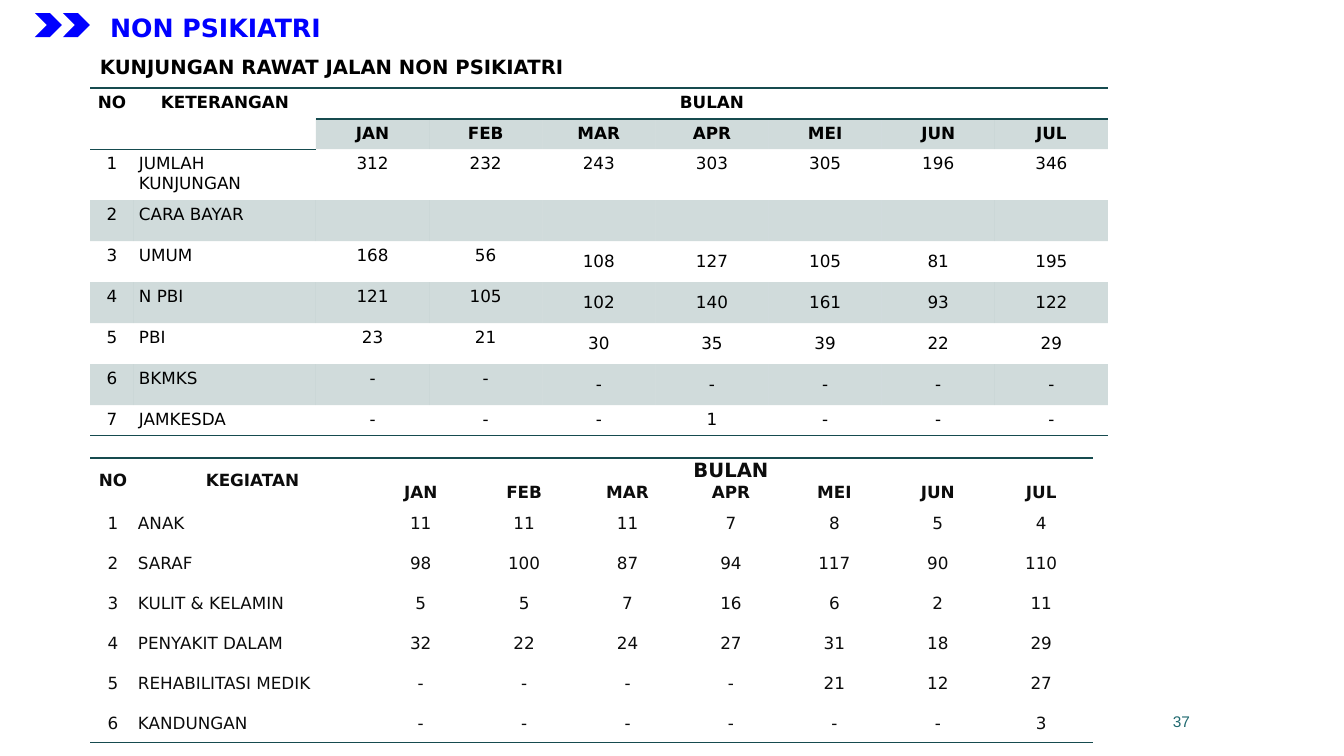
from lxml import etree
from pptx import Presentation
from pptx.dml.color import RGBColor
from pptx.enum.shapes import MSO_SHAPE
from pptx.enum.text import MSO_ANCHOR, MSO_AUTO_SIZE, PP_ALIGN
from pptx.oxml.ns import qn
from pptx.util import Emu, Pt

CHEVRON = MSO_SHAPE.CHEVRON
TOP, MIDDLE = MSO_ANCHOR.TOP, MSO_ANCHOR.MIDDLE
FIT_SHAPE, FIXED = MSO_AUTO_SIZE.SHAPE_TO_FIT_TEXT, MSO_AUTO_SIZE.NONE
LEFT, CENTER, RIGHT = PP_ALIGN.LEFT, PP_ALIGN.CENTER, PP_ALIGN.RIGHT

BLUE = RGBColor(0x00, 0x00, 0xFF)
BLACK = RGBColor(0x00, 0x00, 0x00)
NEAR_BLACK = RGBColor(0x0C, 0x0C, 0x0C)
TEAL = RGBColor(0x16, 0x4B, 0x4F)
PAGE_TEAL = RGBColor(0x1F, 0x69, 0x6F)

PLAIN_TABLE = "{2D5ABB26-0587-4C30-8999-92F81FD0307C}"
MONTHS = "JAN FEB MAR APR MEI JUN JUL".split()

VISITS = [
    ("JUMLAH KUNJUNGAN", "312 232 243 303 305 196 346"),
    ("CARA BAYAR", ""),
    ("UMUM", "168 56 108 127 105 81 195"),
    ("N PBI", "121 105 102 140 161 93 122"),
    ("PBI", "23 21 30 35 39 22 29"),
    ("BKMKS", "- - - - - - -"),
    ("JAMKESDA", "- - - 1 - - -"),
]
ACTIVITIES = [
    ("ANAK", "11 11 11 7 8 5 4"),
    ("SARAF", "98 100 87 94 117 90 110"),
    ("KULIT & KELAMIN", "5 5 7 16 6 2 11"),
    ("PENYAKIT DALAM", "32 22 24 27 31 18 29"),
    ("REHABILITASI MEDIK", "- - - - 21 12 27"),
    ("KANDUNGAN", "- - - - - - 3"),
]


def px(length):
    return Emu(round(length * 914400 / 100.8))


class Deck:
    font = "DejaVu Sans"

    def __init__(self):
        self.file = Presentation()
        self.file.slide_width, self.file.slide_height = px(1344), px(756)
        self.slide = self.file.slides.add_slide(self.file.slide_layouts[6])

    def style(self, paragraph, size, color, bold, align, font=None):
        paragraph.alignment = align
        paragraph.font.name = font or self.font
        paragraph.font.size = Pt(size)
        paragraph.font.bold = bold
        paragraph.font.color.rgb = color

    def text(self, words, box, size, color, bold=True, align=LEFT, font=None,
             anchor=TOP, wrap=False, spacing=None):
        frame = self.slide.shapes.add_textbox(*map(px, box)).text_frame
        frame.word_wrap = wrap
        frame.auto_size = FIXED if wrap else FIT_SHAPE
        frame.vertical_anchor = anchor
        paragraph = frame.paragraphs[0]
        paragraph.text = words
        paragraph.line_spacing = spacing
        self.style(paragraph, size, color, bold, align, font)

    def chevron(self, left):
        mark = self.slide.shapes.add_shape(CHEVRON, px(left), px(13), px(27), px(24))
        mark.shadow.inherit = False
        mark.fill.solid()
        mark.fill.fore_color.rgb = BLUE
        mark.line.fill.background()

    def edge(self, cell, side):
        line = etree.SubElement(cell._tc.get_or_add_tcPr(), qn("a:ln" + side), w=str(Pt(1)))
        paint = etree.SubElement(line, qn("a:solidFill"))
        etree.SubElement(paint, qn("a:srgbClr"), val=str(TEAL))

    def shade(self, cell):
        cell.fill.solid()
        cell.fill.fore_color.rgb = TEAL
        tint = cell._tc.tcPr.find(".//" + qn("a:srgbClr"))
        etree.SubElement(tint, qn("a:alpha"), val="20000")

    def monthly_table(self, top, label, records, heights, label_widths, months_width,
                      color, margins, month_size=12, banded=False):
        grid = [["NO", label, "BULAN"] + [""] * 6, ["", ""] + MONTHS]
        for number, (name, values) in enumerate(records, 1):
            grid.append([str(number), name] + (values.split() or [""] * 7))
        last = len(grid) - 1
        table = self.slide.shapes.add_table(
            len(grid), 9, px(90), px(top),
            px(sum(label_widths) + months_width), px(sum(heights))).table
        table.first_row = table.horz_banding = False
        table._tbl.tblPr.find(qn("a:tableStyleId")).text = PLAIN_TABLE
        widths = label_widths + [months_width / 7] * 7
        for column, width in zip(table.columns, widths):
            column.width = px(width)
        for row, height in zip(table.rows, heights):
            row.height = px(height)
        for r, row in enumerate(grid):
            for c, words in enumerate(row):
                cell = table.cell(r, c)
                (cell.margin_left, cell.margin_top,
                 cell.margin_right, cell.margin_bottom) = map(px, margins)
                late_month = r > 3 and c > 3
                cell.vertical_anchor = MIDDLE if late_month or not banded else TOP
                paragraph = cell.text_frame.paragraphs[0]
                if words:
                    paragraph.text = words
                self.style(paragraph, month_size if words == "BULAN" else 12, color,
                           r < 2, LEFT if r > 1 and c == 1 else CENTER)
                if r == 0:
                    self.edge(cell, "T")
                if r == last or banded and (r == 0 or r == 1 and c < 2):
                    self.edge(cell, "B")
                if banded and r % 2 and (r > 1 or c > 1):
                    self.shade(cell)
                else:
                    cell.fill.background()
        for c in (0, 1):
            table.cell(0, c).merge(table.cell(1, c))
        table.cell(0, 2).merge(table.cell(0, 8))


def main():
    deck = Deck()
    deck.text("37", (887, 701, 313, 40), 11, PAGE_TEAL, bold=False, align=RIGHT,
              font="Arial", anchor=MIDDLE, wrap=True)
    deck.monthly_table(458, "KEGIATAN", ACTIVITIES, [24, 21] + [40] * 6, [46, 233], 724,
                       NEAR_BLACK, (2, 1, 2, 0), month_size=14)
    deck.text("KUNJUNGAN RAWAT JALAN NON PSIKIATRI", (90, 53, 511, 31), 14, BLACK,
              spacing=0.9)
    deck.text("NON PSIKIATRI", (91, 7, 249, 40), 18, BLUE, align=CENTER)
    for left in (35, 63):
        deck.chevron(left)
    deck.monthly_table(88, "KETERANGAN", VISITS, [31, 30, 51] + [41] * 5 + [30], [44, 182],
                       792, BLACK, (5, 5, 5, 5), banded=True)
    deck.file.save("out.pptx")


if __name__ == "__main__":
    main()
